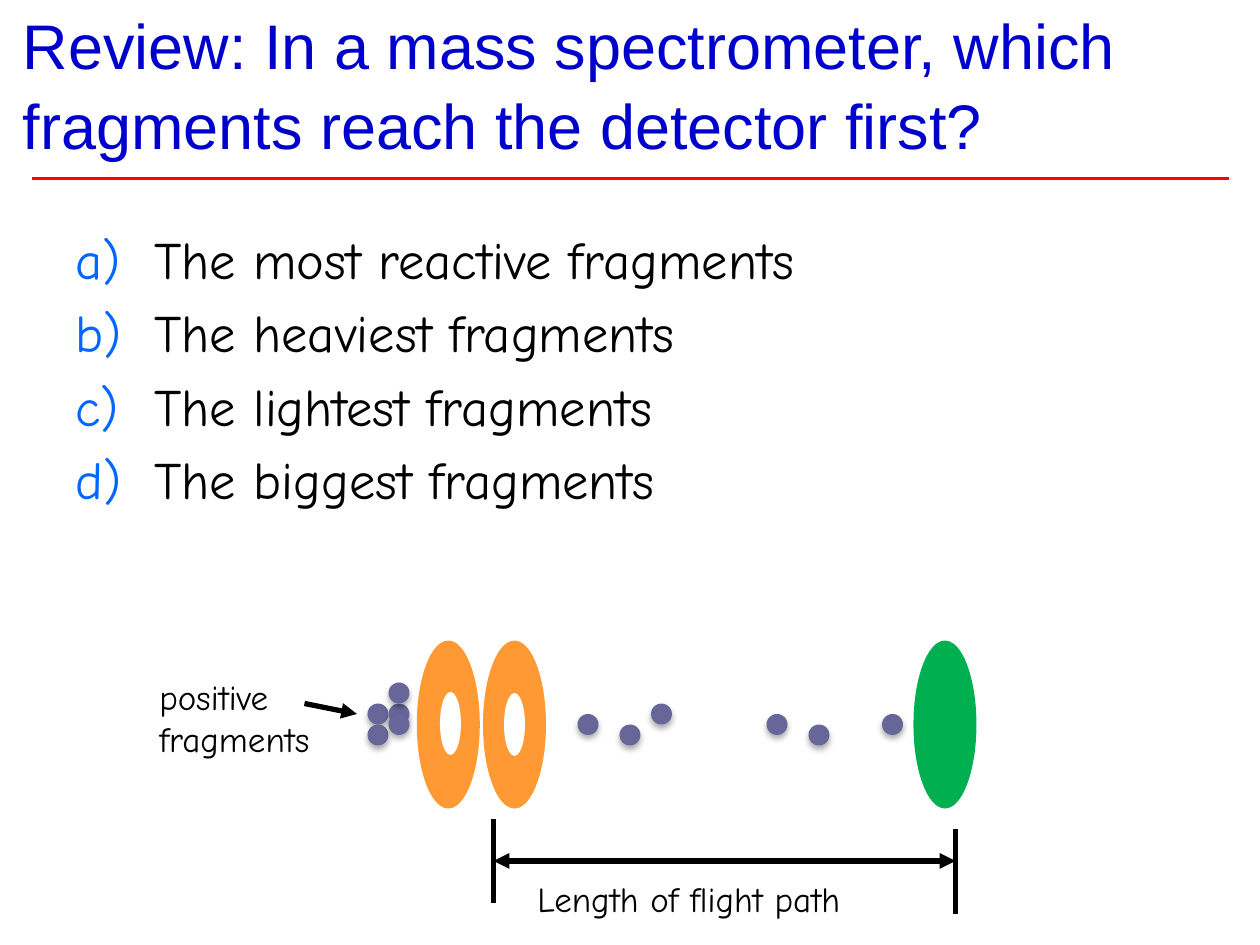
from typing import NamedTuple

from lxml.etree import SubElement
from pptx import Presentation
from pptx.dml.color import RGBColor
from pptx.enum.shapes import MSO_CONNECTOR as Conn, MSO_SHAPE as Shape
from pptx.enum.text import MSO_ANCHOR as Anchor
from pptx.oxml.ns import qn
from pptx.util import Emu, Pt

PX = 914400 // 120  # 120 px to the inch
COLORS = {
    "title": "0000CC", "rule": "FF0000", "text": "000000", "number": "0066FF",
    "plate": "FF9933", "hole": "FFFFFF", "detector": "00B050", "fragment": "666699",
}


class Oval(NamedTuple):
    x: int
    y: int
    w: int
    h: int
    color: str
    shadow: bool = False


class Line(NamedTuple):
    x1: int
    y1: int
    x2: int
    y2: int
    color: str = "text"
    width: float = 3
    head: bool = False
    tail: bool = False


FRAGMENTS = [
    (550, 680), (590, 690), (620, 670), (730, 680), (770, 690), (840, 680),
    (350, 670), (370, 670), (350, 690), (370, 680), (370, 650),
]
OVALS = [
    Oval(397, 610, 60, 160, "plate"),
    Oval(419, 659, 20, 60, "hole"),
    Oval(460, 610, 60, 160, "plate"),
    Oval(480, 660, 20, 60, "hole"),
    Oval(870, 610, 60, 160, "detector"),
    *(Oval(x, y, 20, 20, "fragment", shadow=True) for x, y in FRAGMENTS),
]
LINES = [
    Line(30, 170, 1170, 170, "rule", 1.5),
    Line(470, 780, 470, 860),
    Line(910, 790, 910, 870),
    Line(470, 820, 910, 820, head=True, tail=True),
    Line(290, 670, 340, 680, tail=True),
]
ANSWERS = [f"The {kind} fragments" for kind in ("most reactive", "heaviest", "lightest", "biggest")]


def px(n: int) -> Emu:
    return Emu(n * PX)


def rgb(name: str) -> RGBColor:
    return RGBColor.from_string(COLORS[name])


def add_shadow(sp) -> None:
    """Give the shape a soft shadow straight below it."""
    effects = sp._element.spPr.find(qn("a:effectLst"))
    shadow = SubElement(effects, qn("a:outerShdw"), blurRad=str(Pt(3.5)), dist=str(Pt(2.2)),
                        dir="5400000", rotWithShape="0")
    color = SubElement(shadow, qn("a:srgbClr"), val="000000")
    SubElement(color, qn("a:alpha"), val="32000")


def add_oval(s, oval: Oval) -> None:
    sp = s.shapes.add_shape(Shape.OVAL, *map(px, oval[:4]))
    sp.fill.solid()
    sp.fill.fore_color.rgb = rgb(oval.color)
    sp.line.fill.background()
    sp.shadow.inherit = False
    if oval.shadow:
        add_shadow(sp)


def add_line(s, line: Line) -> None:
    c = s.shapes.add_connector(Conn.STRAIGHT, *map(px, line[:4]))
    c.line.color.rgb = rgb(line.color)
    c.line.width = Pt(line.width)
    ln = c.line._get_or_add_ln()
    for end, wanted in (("a:headEnd", line.head), ("a:tailEnd", line.tail)):
        if wanted:
            SubElement(ln, qn(end), type="triangle")
    SubElement(c._element.spPr, qn("a:effectLst"))


def number(p, indent: int) -> None:
    """Letter the paragraph a), b), c) with a hanging indent."""
    pPr = p._p.get_or_add_pPr()
    pPr.set("marL", str(px(indent)))
    pPr.set("indent", str(px(-indent)))
    SubElement(SubElement(pPr, qn("a:buClr")), qn("a:srgbClr"), val=COLORS["number"])
    SubElement(pPr, qn("a:buAutoNum"), type="alphaLcParenR")


def add_text(s, box: tuple[int, int, int, int], *lines: str, size: int = 20,
             font: str = "Comic Neue", color: str = "text", anchor=Anchor.TOP,
             before: int = 0, spacing: float = 1.0, indent: int = 0) -> None:
    tf = s.shapes.add_textbox(*map(px, box)).text_frame
    tf.word_wrap = True
    tf.vertical_anchor = anchor
    for i, line in enumerate(lines):
        p = tf.add_paragraph() if i else tf.paragraphs[0]
        p.space_before = Pt(before)
        p.line_spacing = spacing
        if indent:
            number(p, indent)
        r = p.add_run()
        r.text = line
        r.font.size = Pt(size)
        r.font.name = font
        r.font.color.rgb = rgb(color)


def main() -> None:
    prs = Presentation()
    prs.slide_width, prs.slide_height = px(1200), px(900)
    s = prs.slides.add_slide(prs.slide_layouts[6])
    add_text(s, (10, 0, 1180, 160),
             "Review: In a mass spectrometer, which fragments reach the detector first?",
             size=36, font="Arial", color="title", anchor=Anchor.BOTTOM, spacing=1.05)
    add_text(s, (60, 210, 750, 340), *ANSWERS, size=30, before=6, indent=75)
    for oval in OVALS:
        add_oval(s, oval)
    add_text(s, (140, 637, 240, 92), "positive fragments")
    add_text(s, (500, 830, 380, 52), "Length of flight path")
    for line in LINES:
        add_line(s, line)
    prs.save("out.pptx")


if __name__ == "__main__":
    main()
